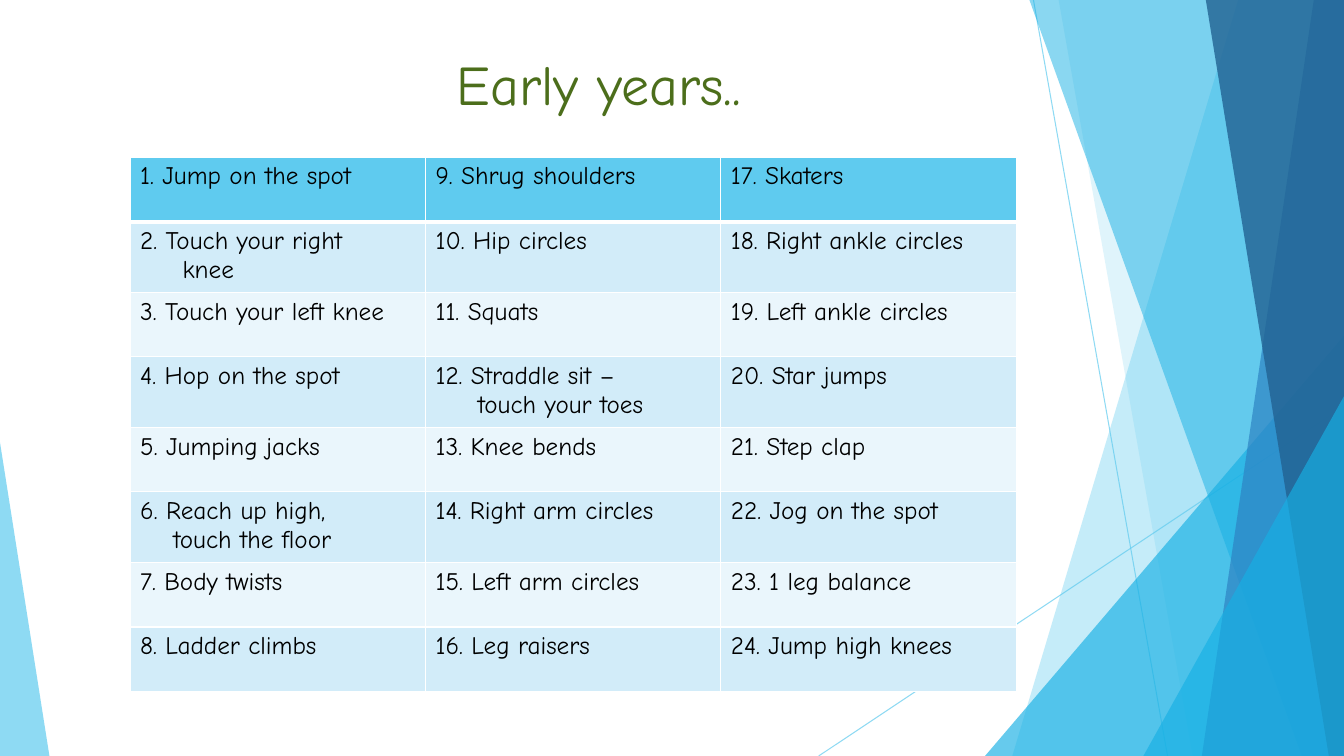
from dataclasses import dataclass

import pptx
import pptx.util
import pptx.dml.color
import pptx.enum.shapes
import pptx.enum.text
import pptx.oxml.ns
from lxml import etree

Inches = pptx.util.Inches
Pt = pptx.util.Pt
qn = pptx.oxml.ns.qn

WIDE, HIGH = 13.33, 7.5
FONT = "Comic Neue"
SKY, CYAN, BLUE, NAVY = "5FCBEF", "17B0E4", "2E83C3", "226292"
HEAD, BANDS = SKY, ("D2ECF9", "EAF6FC")


@dataclass
class Ray:
    start: tuple[float, float]
    end: tuple[float, float]


@dataclass
class Pane:
    """Four-sided pane along the right edge, from its top and bottom left corners."""
    top: float
    base: float
    color: str
    alpha: int


@dataclass
class Wedge:
    """Right-angled triangle standing on the bottom edge."""
    left: float
    width: float
    height: float
    apex: float
    color: str
    alpha: int


@dataclass
class Move:
    text: str
    more: str = ""
    indent: float = 0


RAYS = [Ray((10.25, 0), (11.58, HIGH)), Ray((WIDE, 4.03), (8.12, HIGH))]

FACETS = [
    Pane(12.28, 10.04, SKY, 36),
    Pane(10.5, 11.83, SKY, 20),
    Wedge(9.77, 3.56, 4.17, 1, CYAN, 66),
    Pane(10.21, 12.91, CYAN, 50),
    Pane(13.03, 11.92, BLUE, 70),
    Pane(11.96, 13.18, NAVY, 80),
    Wedge(11.34, 1.99, 3.57, 1, CYAN, 66),
    Wedge(0, 0.49, 3.11, 0, SKY, 70),
]

# Numbered down the columns
MOVES = [
    Move("Jump on the spot"), Move("Touch your right", "knee", 0.42),
    Move("Touch your left knee"), Move("Hop on the spot"),
    Move("Jumping jacks"), Move("Reach up high,", "touch the floor", 0.33),
    Move("Body twists"), Move("Ladder climbs"),
    Move("Shrug shoulders"), Move("Hip circles"),
    Move("Squats"), Move("Straddle sit –", "touch your toes", 0.42),
    Move("Knee bends"), Move("Right arm circles"),
    Move("Left arm circles"), Move("Leg raisers"),
    Move("Skaters"), Move("Right ankle circles"),
    Move("Left ankle circles"), Move("Star jumps"),
    Move("Step clap"), Move("Jog on the spot"),
    Move("1 leg balance"), Move("Jump high knees"),
]
ROWS, COLS = 8, 3


def rgb(code: str) -> pptx.dml.color.RGBColor:
    return pptx.dml.color.RGBColor.from_string(code)


def fade(shape, alpha: int) -> None:
    for color in shape._element.iter(qn("a:srgbClr")):
        etree.SubElement(color, qn("a:alpha"), val=str(alpha * 1000))


def style(para, size: float, color: str) -> None:
    font = para.font
    font.name, font.size, font.bold = FONT, Pt(size), False
    font.color.rgb = rgb(color)


def draw_ray(slide, ray: Ray) -> None:
    ends = [Inches(n) for n in (*ray.start, *ray.end)]
    line = slide.shapes.add_connector(pptx.enum.shapes.MSO_CONNECTOR.STRAIGHT, *ends)
    line.line.width = Pt(0.75)
    line.line.color.rgb = rgb(SKY)
    fade(line, 70)
    etree.SubElement(line._element.spPr, qn("a:effectLst"))


def draw_facet(slide, facet: Pane | Wedge) -> None:
    if isinstance(facet, Pane):
        pen = slide.shapes.build_freeform(Inches(facet.top), 0)
        pen.add_line_segments([(Inches(x), Inches(y)) for x, y in
                               ((WIDE, 0), (WIDE, HIGH), (facet.base, HIGH))])
        shape = pen.convert_to_shape()
    else:
        shape = slide.shapes.add_shape(
            pptx.enum.shapes.MSO_SHAPE.ISOSCELES_TRIANGLE,
            Inches(facet.left), Inches(HIGH - facet.height),
            Inches(facet.width), Inches(facet.height))
        shape.adjustments[0] = facet.apex
    shape.shadow.inherit = False
    shape.line.fill.background()
    shape.fill.solid()
    shape.fill.fore_color.rgb = rgb(facet.color)
    fade(shape, facet.alpha)


def draw_title(slide, text: str) -> None:
    box = slide.shapes.add_textbox(Inches(0.67), Inches(0.44), Inches(10.54), Inches(0.77))
    box.text_frame.word_wrap = True
    para = box.text_frame.paragraphs[0]
    para.text = text
    para.alignment = pptx.enum.text.PP_ALIGN.CENTER
    style(para, 40, "4C6E1B")


def edge(cell, side: str, width: float) -> None:
    line = etree.SubElement(cell._tc.get_or_add_tcPr(), qn(f"a:ln{side}"), w=str(Pt(width)))
    fill = etree.SubElement(line, qn("a:solidFill"))
    etree.SubElement(fill, qn("a:srgbClr"), val="FFFFFF")


def fill_cell(cell, row: int, label: str, move: Move) -> None:
    # Borders come before the fill
    for side in "LRTB":
        thick = (row, side) in ((0, "B"), (1, "T"))
        edge(cell, side, 3 if thick else 1)
    cell.fill.solid()
    cell.fill.fore_color.rgb = rgb(BANDS[(row - 1) % 2] if row else HEAD)

    frame = cell.text_frame
    frame.text = label
    if move.more:
        para = frame.add_paragraph()
        para.text = move.more
        para._p.get_or_add_pPr().set("marL", str(Inches(move.indent)))
    for para in frame.paragraphs:
        style(para, 18, "000000")


def draw_table(slide) -> None:
    wide, high = Inches(2.93), Inches(0.64)
    table = slide.shapes.add_table(ROWS, COLS, Inches(1.29), Inches(1.56),
                                   wide * COLS, high * ROWS).table
    for col in table.columns:
        col.width = wide
    for row in table.rows:
        row.height = high
    for i, move in enumerate(MOVES):
        col, row = divmod(i, ROWS)
        fill_cell(table.cell(row, col), row, f"{i + 1}. {move.text}", move)


def main() -> None:
    deck = pptx.Presentation()
    deck.slide_width, deck.slide_height = Inches(WIDE), Inches(HIGH)
    slide = deck.slides.add_slide(deck.slide_layouts[6])

    # Backdrop
    for ray in RAYS:
        draw_ray(slide, ray)
    for facet in FACETS:
        draw_facet(slide, facet)

    # Content
    draw_title(slide, "Early years..")
    draw_table(slide)
    deck.save("out.pptx")


if __name__ == "__main__":
    main()
